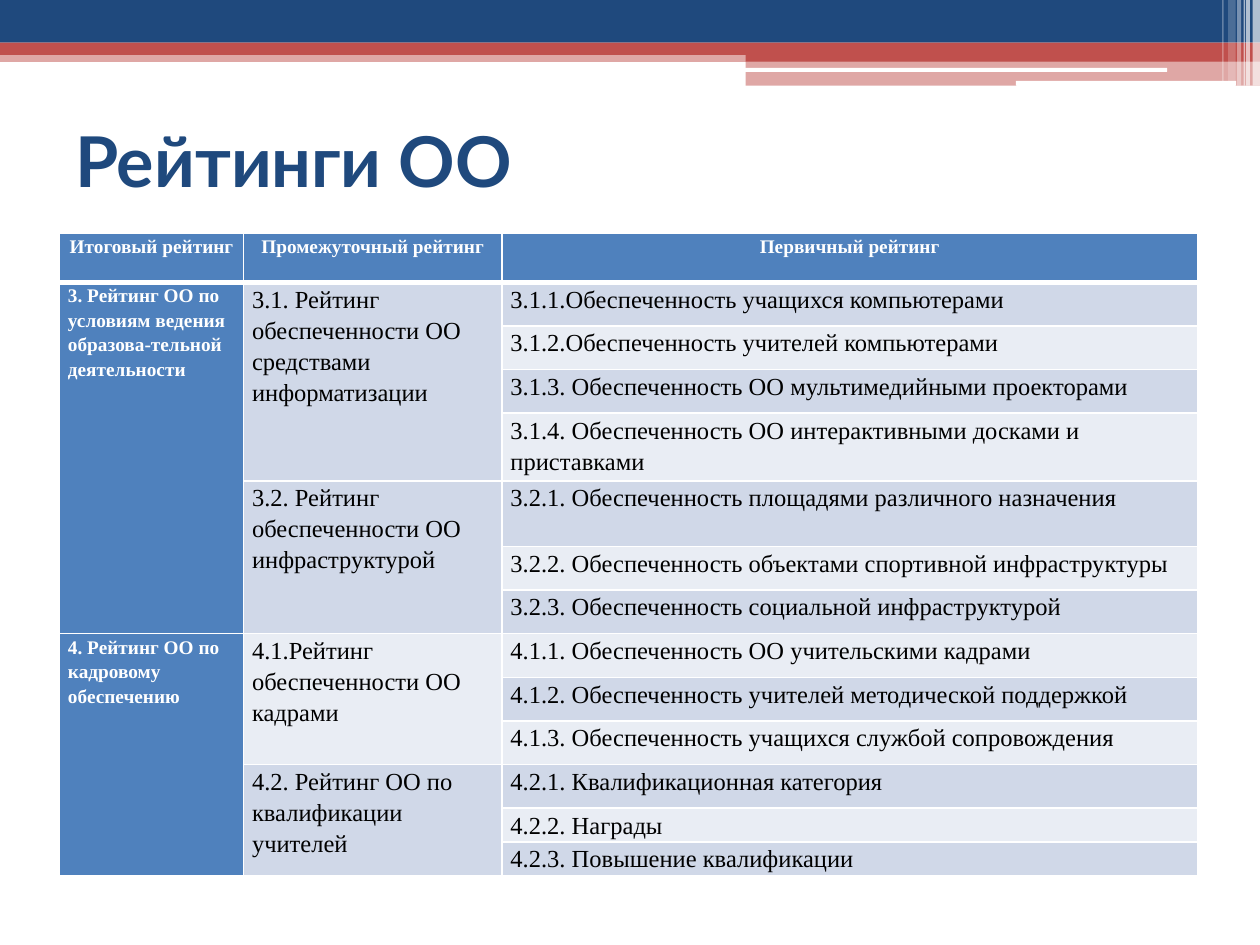
from typing import NamedTuple

from lxml import etree
from pptx import Presentation
from pptx import util as u
from pptx.dml.color import RGBColor
from pptx.enum import shapes, text
from pptx.oxml.ns import qn

HUE = {"navy": "1F497D", "red": "C0504D", "white": "FFFFFF", "black": "000000",
       "blue": "4F81BD", "dark": "D0D8E8", "light": "E9EDF4"}
SERIF = "Times New Roman"


class Bar(NamedTuple):
    left: float
    top: float
    width: float
    height: float
    hue: str
    alpha: int = 100
    round: bool = False


class Group(NamedTuple):
    title: str
    hue: str
    items: list[str]


class Part(NamedTuple):
    title: str
    groups: list[Group]


BARS = [
    Bar(0, 1.02, 25.4, 0.23, "red", 50),
    Bar(0, 0, 25.4, 0.86, "navy"),
    Bar(0, 0.86, 25.4, 0.25, "red"),
    Bar(15.03, 0.99, 10.37, 0.25, "red"),
    Bar(15.03, 1.23, 10.37, 0.5, "red", 50),
    Bar(15.01, 1.37, 8.52, 0.08, "white", round=True),
    Bar(20.48, 1.63, 4.44, 0.1, "white", round=True),
    Bar(25.25, 0, 0.15, 1.73, "white", 65),
    Bar(25.12, 0, 0.08, 1.73, "white", 65),
    Bar(25.07, 0, 0.03, 1.73, "white", 60),
    Bar(24.94, 0, 0.08, 1.73, "white", 40),
    Bar(24.76, 0, 0.15, 1.63, "white", 20),
    Bar(24.64, 0, 0.03, 1.63, "white", 30),
]

HEADS = ["Итоговый рейтинг", "Промежуточный рейтинг", "Первичный рейтинг"]
PARTS = [
    Part("3. Рейтинг ОО по условиям ведения образова-тельной деятельности", [
        Group("3.1. Рейтинг обеспеченности ОО средствами информатизации", "dark", [
            "3.1.1.Обеспеченность учащихся компьютерами",
            "3.1.2.Обеспеченность учителей компьютерами",
            "3.1.3. Обеспеченность ОО мультимедийными проекторами",
            "3.1.4. Обеспеченность ОО интерактивными досками и приставками"]),
        Group("3.2. Рейтинг обеспеченности ОО инфраструктурой", "dark", [
            "3.2.1. Обеспеченность площадями различного назначения",
            "3.2.2. Обеспеченность объектами спортивной инфраструктуры",
            "3.2.3. Обеспеченность социальной инфраструктурой"])]),
    Part("4. Рейтинг ОО по кадровому обеспечению", [
        Group("4.1.Рейтинг обеспеченности ОО кадрами", "light", [
            "4.1.1. Обеспеченность ОО учительскими кадрами",
            "4.1.2. Обеспеченность учителей методической поддержкой",
            "4.1.3. Обеспеченность учащихся службой сопровождения"]),
        Group("4.2. Рейтинг ОО по квалификации учителей", "dark", [
            "4.2.1. Квалификационная категория",
            "4.2.2. Награды",
            "4.2.3. Повышение квалификации"])]),
]
COLS = [3.71, 5.21, 14.02]
ROWS = [0.99] + [0.88] * 3 + [1.32] * 2 + [0.88] * 6 + [0.43] * 2


def rgb(hue: str) -> RGBColor:
    return RGBColor.from_string(HUE[hue])


def write(frame, words: str, *, size: float, hue: str, font: str = SERIF,
          bold: bool = False, center: bool = False, space: float = 1) -> None:
    frame.word_wrap = True
    para = frame.paragraphs[0]
    para.alignment = text.PP_ALIGN.CENTER if center else text.PP_ALIGN.LEFT
    para.line_spacing = space
    run = para.add_run()
    run.text = words
    run.font.name, run.font.size, run.font.bold = font, u.Pt(size), bold
    run.font.color.rgb = rgb(hue)


def draw_bar(slide, bar: Bar) -> None:
    kind = shapes.MSO_SHAPE.ROUNDED_RECTANGLE if bar.round else shapes.MSO_SHAPE.RECTANGLE
    shape = slide.shapes.add_shape(kind, *map(u.Cm, bar[:4]))
    shape.shadow.inherit = False
    shape.line.fill.background()
    shape.fill.solid()
    shape.fill.fore_color.rgb = rgb(bar.hue)
    if bar.alpha < 100:
        color = shape.fill._xPr.find(f".//{qn('a:srgbClr')}")
        etree.SubElement(color, qn("a:alpha"), val=str(bar.alpha * 1000))


def edge(cell, row: int) -> None:
    """Give a cell white borders, thick between the heading and the body."""
    wide = {0: "B", 1: "T"}.get(row)
    for spot, side in enumerate("LRTB"):
        width = u.Pt(3 if side == wide else 1)
        line = etree.Element(qn(f"a:ln{side}"), w=str(width))
        fill = etree.SubElement(line, qn("a:solidFill"))
        etree.SubElement(fill, qn("a:srgbClr"), val=HUE["white"])
        cell._tc.get_or_add_tcPr().insert(spot, line)


def put(table, row: int, col: int, words: str, fill: str, span: int = 1, **form) -> None:
    cell = table.cell(row, col)
    if span > 1:
        cell.merge(table.cell(row + span - 1, col))
    cell.fill.solid()
    cell.fill.fore_color.rgb = rgb(fill)
    write(cell.text_frame, words, space=1.15, **form)


def draw_table(slide) -> None:
    frame = slide.shapes.add_table(len(ROWS), len(COLS), u.Cm(1.2), u.Cm(4.7),
                                   u.Cm(sum(COLS)), u.Cm(sum(ROWS)))
    table = frame.table
    table.first_row = table.horz_banding = False
    for col, width in zip(table.columns, COLS):
        col.width = u.Cm(width)
    for row, (line, height) in enumerate(zip(table.rows, ROWS)):
        line.height = u.Cm(height)
        for cell in line.cells:
            cell.margin_left = cell.margin_right = u.Cm(0.17)
            cell.margin_top = cell.margin_bottom = 0
            edge(cell, row)

    head = dict(fill="blue", size=11, hue="white", bold=True)
    body = dict(size=14, hue="black")
    for col, words in enumerate(HEADS):
        put(table, 0, col, words, center=True, **head)
    row = 1
    for part in PARTS:
        span = sum(len(group.items) for group in part.groups)
        put(table, row, 0, part.title, span=span, **head)
        for group in part.groups:
            put(table, row, 1, group.title, group.hue, len(group.items), **body)
            for item in group.items:
                put(table, row, 2, item, "dark" if row % 2 else "light", **body)
                row += 1


def main() -> None:
    deck = Presentation()
    deck.slide_width, deck.slide_height = u.Cm(25.4), u.Cm(19.05)
    slide = deck.slides.add_slide(deck.slide_layouts[6])
    for bar in BARS:
        draw_bar(slide, bar)
    title = slide.shapes.add_textbox(u.Cm(1.27), u.Cm(1.73), u.Cm(22.86), u.Cm(2.97))
    title.text_frame.vertical_anchor = text.MSO_ANCHOR.MIDDLE
    write(title.text_frame, "Рейтинги ОО", size=40, hue="navy", font="Lato", bold=True)
    draw_table(slide)
    deck.save("out.pptx")


if __name__ == "__main__":
    main()
